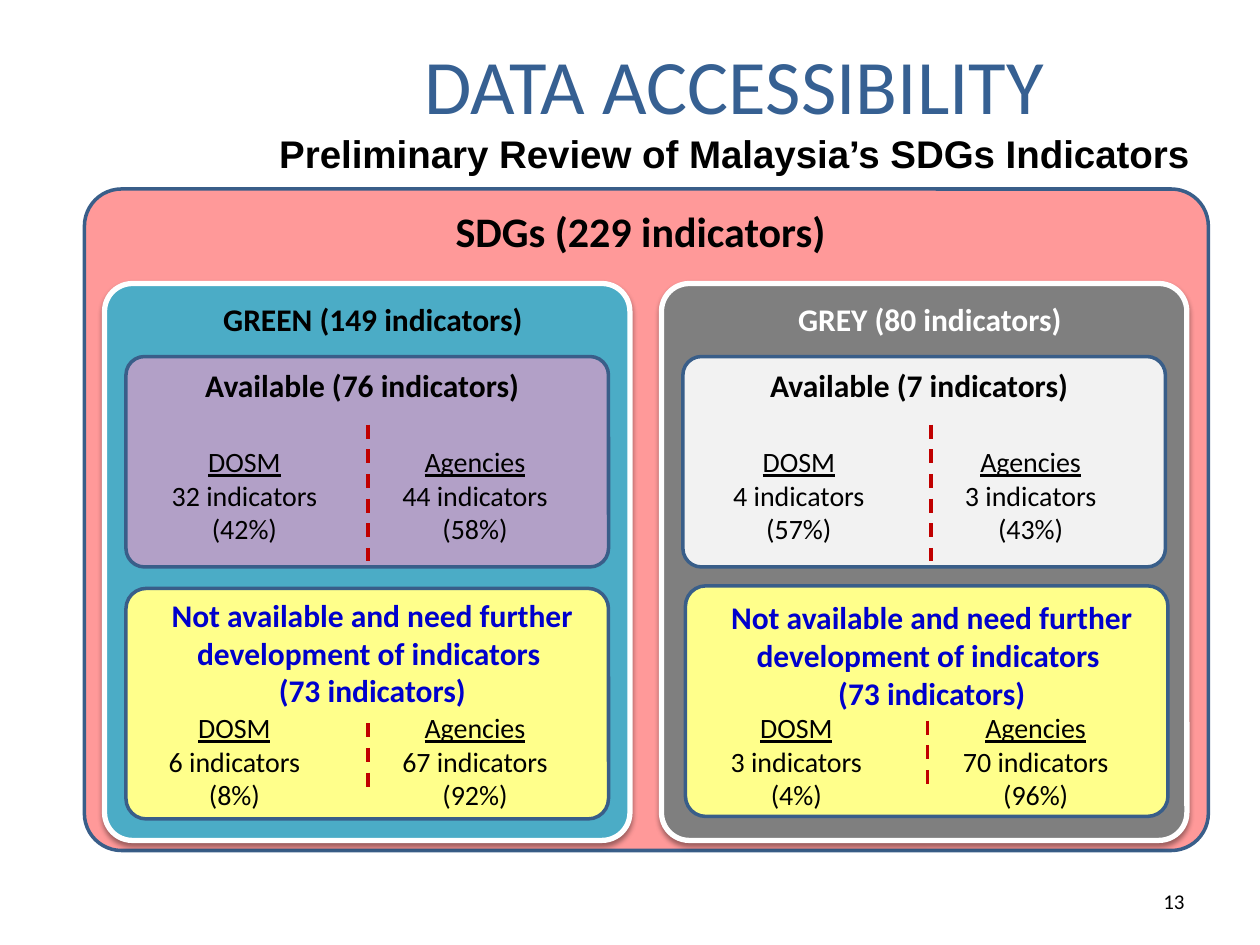
"""Build the data accessibility slide: SDG indicators by availability and source."""
from lxml import etree
from pptx import Presentation
from pptx import util as u
from pptx.dml.color import RGBColor
from pptx.enum import dml, shapes, text
from pptx.oxml.ns import qn

BLACK = RGBColor(0, 0, 0)
WHITE = RGBColor(255, 255, 255)
TITLE = RGBColor(0x36, 0x60, 0x92)
EDGE = RGBColor(0x39, 0x5E, 0x89)
PINK = RGBColor(0xFF, 0x99, 0x99)
TEAL = RGBColor(0x4B, 0xAC, 0xC6)
GREY = RGBColor(0x7F, 0x7F, 0x7F)
PURPLE = RGBColor(0xB2, 0xA0, 0xC7)
PALE = RGBColor(0xF2, 0xF2, 0xF2)
YELLOW = RGBColor(0xFF, 0xFF, 0x8B)
BLUE = RGBColor(0, 0, 0xCC)
RED = RGBColor(0xC0, 0, 0)

NEED = ["Not available and need further development of indicators ", "(73 indicators)"]
PANELS = [
    {"left": 0.83, "name": "GREEN (149 indicators)", "fill": TEAL, "ink": BLACK,
     "have": {"at": (1, 2.83), "fill": PURPLE, "head": "Available (76 indicators)", "rule": 2.92,
              "cols": [(1.94, "DOSM", "32 indicators", "(42%)"),
                       (3.77, "Agencies", "44 indicators", "(58%)")]},
     "lack": {"at": (1, 4.67), "head": 4.68, "rule": 2.92,
              "cols": [(1.86, "DOSM", "6 indicators", "(8%)"),
                       (3.77, "Agencies", "67 indicators", "(92%)")]}},
    {"left": 5.25, "name": "GREY (80 indicators)", "fill": GREY, "ink": WHITE,
     "have": {"at": (5.42, 2.83), "fill": PALE, "head": "Available (7 indicators)", "rule": 7.39,
              "cols": [(6.34, "DOSM", "4 indicators", "(57%)"),
                       (8.18, "Agencies", "3 indicators", "(43%)")]},
     "lack": {"at": (5.44, 4.65), "head": 4.7, "rule": 7.36,
              "cols": [(6.32, "DOSM", "3 indicators", "(4%)"),
                       (8.22, "Agencies", "70 indicators", "(96%)")]}},
]
COL = 1.47

deck = Presentation()
deck.slide_width, deck.slide_height = u.Inches(10), u.Inches(7.5)
slide = deck.slides.add_slide(deck.slide_layouts[6])


def inch(*nums):
    return [u.Inches(n) for n in nums]


def add_run(para, words, size, ink, bold=False, line=False, face="Calibri"):
    run = para.add_run()
    run.text = words
    font = run.font
    font.name, font.size, font.bold, font.underline = face, u.Pt(size), bold, line
    font.color.rgb = ink


def frame(box, pad=0.1):
    body = slide.shapes.add_textbox(*inch(*box)).text_frame
    body.word_wrap = True
    body.margin_left = body.margin_right = u.Inches(pad)
    body.paragraphs[0].alignment = text.PP_ALIGN.CENTER
    return body


def label(box, lines, size, ink=BLACK, bold=False, under=False, pad=0.1):
    body = frame(box, pad)
    for i, words in enumerate(lines):
        para = body.add_paragraph() if i else body.paragraphs[0]
        para.alignment = text.PP_ALIGN.CENTER
        add_run(para, words, size, ink, bold, under and i == 0)


def card(box, fill, curve, edge=EDGE, width=2):
    shape = slide.shapes.add_shape(shapes.MSO_SHAPE.ROUNDED_RECTANGLE, *inch(*box))
    shape.adjustments[0] = curve
    shape.shadow.inherit = False
    shape.fill.solid()
    shape.fill.fore_color.rgb = fill
    shape.line.color.rgb = edge
    shape.line.width = u.Pt(width)
    return shape


def shade(shape):
    glow = shape._element.spPr.find(qn("a:effectLst"))
    drop = etree.SubElement(glow, qn("a:outerShdw"), blurRad=str(u.Pt(3.1)),
                            dist=str(u.Pt(1.6)), dir="5400000", rotWithShape="0")
    tone = etree.SubElement(drop, qn("a:srgbClr"), val="000000")
    etree.SubElement(tone, qn("a:alpha"), val="38000")


def rule(x, top, end):
    line = slide.shapes.add_connector(shapes.MSO_CONNECTOR.STRAIGHT, *inch(x, top, x, end))
    line.line.color.rgb = RED
    line.line.width = u.Pt(2)
    line.line.dash_style = dml.MSO_LINE.DASH
    etree.SubElement(line._element.spPr, qn("a:effectLst"))


def split(block, top, start, end):
    for mid, *lines in block["cols"]:
        label((mid - COL / 2, top, COL, 0.91), lines, 16, under=True)
    rule(block["rule"], start, end)


def panel(data):
    left, have, lack = data["left"], data["have"], data["lack"]
    shade(card((left, 2.25, 4.17, 4.42), data["fill"], 0.053, WHITE, 3))
    label((left + 0.17, 2.33, 3.92, 0.42), [data["name"]], 18, data["ink"], True)

    x, y = have["at"]
    card((x, y, 3.83, 1.67), have["fill"], 0.088)
    label((x, y + 0.03, 3.75, 0.4), [have["head"]], 18, bold=True)
    split(have, 3.48, 3.37, 4.45)

    x, y = lack["at"]
    card((x, y, 3.83, 1.83), YELLOW, 0.088)
    label((x + 0.08, lack["head"], 3.75, 1.01), NEED, 18, BLUE, True, pad=0)
    split(lack, 5.59, y + 1.07, y + 1.65)


head = frame((1.83, 0.25, 8, 0.67)).paragraphs[0]
add_run(head, "DATA ACCESSIBILITY", 44, TITLE)
head.add_line_break()
add_run(head, "Preliminary Review of Malaysia’s SDGs Indicators", 22, BLACK, True, face="Arial")

foot = frame((7.17, 6.95, 2.33, 0.4))
foot.vertical_anchor = text.MSO_ANCHOR.MIDDLE
foot.paragraphs[0].alignment = text.PP_ALIGN.RIGHT
add_run(foot.paragraphs[0], "13", 12, BLACK)

card((0.67, 1.5, 8.92, 5.25), PINK, 0.056)
label((0.75, 1.58, 8.67, 0.51), ["SDGs (229 indicators)"], 24, bold=True)
for data in PANELS:
    panel(data)

deck.save("out.pptx")
